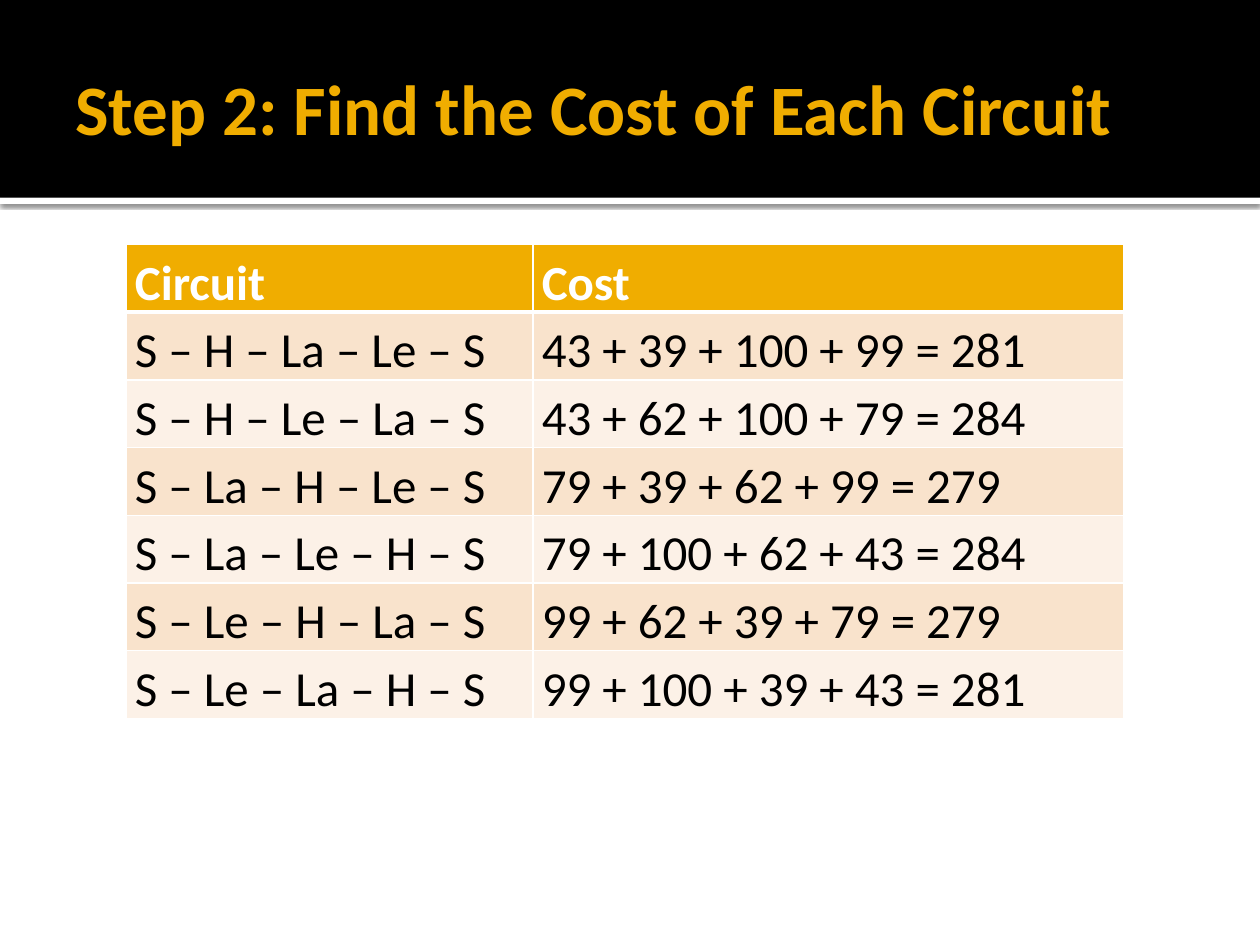
from dataclasses import dataclass

from lxml.etree import SubElement
from pptx import Presentation
from pptx.dml.color import RGBColor
from pptx.enum.shapes import MSO_SHAPE
from pptx.enum.text import MSO_ANCHOR
from pptx.oxml import parse_xml
from pptx.oxml.ns import nsdecls, qn
from pptx.util import Pt


@dataclass(frozen=True)
class Theme:
    font: str = "Calibri"
    head: float = 40.5
    body: float = 28
    gold: str = "F0AD00"
    dark: str = "000000"
    light: str = "FFFFFF"
    bands: tuple = ("F9E3CC", "FCF1E7")


ROWS = [
    ("Circuit", "Cost"),
    ("S – H – La – Le – S", "43 + 39 + 100 + 99 = 281"),
    ("S – H – Le – La – S", "43 + 62 + 100 + 79 = 284"),
    ("S – La – H – Le – S", "79 + 39 + 62 + 99 = 279"),
    ("S – La – Le – H – S", "79 + 100 + 62 + 43 = 284"),
    ("S – Le – H – La – S", "99 + 62 + 39 + 79 = 279"),
    ("S – Le – La – H – S", "99 + 100 + 39 + 43 = 281"),
]


class Deck:
    def __init__(self, theme):
        self.theme = theme
        self.show = Presentation()
        self.show.slide_width, self.show.slide_height = Pt(720), Pt(540)
        self.slide = self.show.slides.add_slide(self.show.slide_layouts[6])

    def run(self, para, text, size, color, bold=False):
        run = para.add_run()
        run.text = text
        font = run.font
        font.name, font.size, font.bold = self.theme.font, Pt(size), bold
        font.color.rgb = RGBColor.from_string(color)

    def bar(self, top, height, color):
        bar = self.slide.shapes.add_shape(
            MSO_SHAPE.RECTANGLE, 0, Pt(top), self.show.slide_width, Pt(height))
        bar.shadow.inherit = False
        bar.fill.solid()
        bar.fill.fore_color.rgb = RGBColor.from_string(color)
        bar.line.fill.background()
        return bar

    def shade(self, shape, blur, dist, alpha):
        """Cast a shadow straight down; alpha is a percentage."""
        effects = shape.element.spPr.find(qn("a:effectLst"))
        outer = SubElement(effects, qn("a:outerShdw"), blurRad=str(Pt(blur)),
                           dist=str(Pt(dist)), dir="5400000", rotWithShape="0")
        color = SubElement(outer, qn("a:srgbClr"), val=self.theme.dark)
        SubElement(color, qn("a:alpha"), val=str(alpha * 1000))

    def title(self, text, left, top, width, height):
        box = self.slide.shapes.add_textbox(
            Pt(left), Pt(top), Pt(width), Pt(height))
        frame = box.text_frame
        frame.word_wrap = True
        frame.vertical_anchor = MSO_ANCHOR.MIDDLE
        frame.margin_left = Pt(7.2)
        frame.margin_right = frame.margin_top = frame.margin_bottom = Pt(3.6)
        self.run(frame.paragraphs[0], text,
                 self.theme.head, self.theme.gold, True)

    def edge(self, cell, **widths):
        """Draw cell borders; widths in points by side, in the order L, R, T, B."""
        props = cell._tc.get_or_add_tcPr()
        for spot, (side, width) in enumerate(widths.items()):
            props.insert(spot, parse_xml(
                f'<a:ln{side} {nsdecls("a")} w="{Pt(width)}"><a:solidFill>'
                f'<a:srgbClr val="{self.theme.light}"/></a:solidFill></a:ln{side}>'))

    def cell(self, cell, text, row):
        theme = self.theme
        head = row == 0
        cell.margin_left = cell.margin_right = Pt(5.1)
        cell.margin_top = cell.margin_bottom = 0
        cell.fill.solid()
        cell.fill.fore_color.rgb = RGBColor.from_string(
            theme.gold if head else theme.bands[(row - 1) % 2])
        self.edge(cell, L=1, R=1, T=3 if row == 1 else 1, B=3 if head else 1)
        para = cell.text_frame.paragraphs[0]
        para.line_spacing = 1.15
        self.run(para, text, theme.body,
                 theme.light if head else theme.dark, head)

    def table(self, rows, left, top, widths, height):
        grid = self.slide.shapes.add_table(
            len(rows), len(widths), Pt(left), Pt(top),
            Pt(sum(widths)), Pt(height * len(rows))).table
        for col, width in zip(grid.columns, widths):
            col.width = Pt(width)
        for r, texts in enumerate(rows):
            grid.rows[r].height = Pt(height)
            for c, text in enumerate(texts):
                self.cell(grid.cell(r, c), text, r)


def main():
    theme = Theme()
    deck = Deck(theme)
    strip = deck.bar(113, 3.6, theme.light)
    deck.shade(strip, blur=2.5, dist=0.8, alpha=60)
    deck.bar(0, 113, theme.dark)
    deck.title("Step 2: Find the Cost of Each Circuit", 36, 12.2, 648, 98.6)
    deck.table(ROWS, 72, 139.7, (232.5, 337.7), 38.7)
    deck.show.save("out.pptx")


if __name__ == "__main__":
    main()
